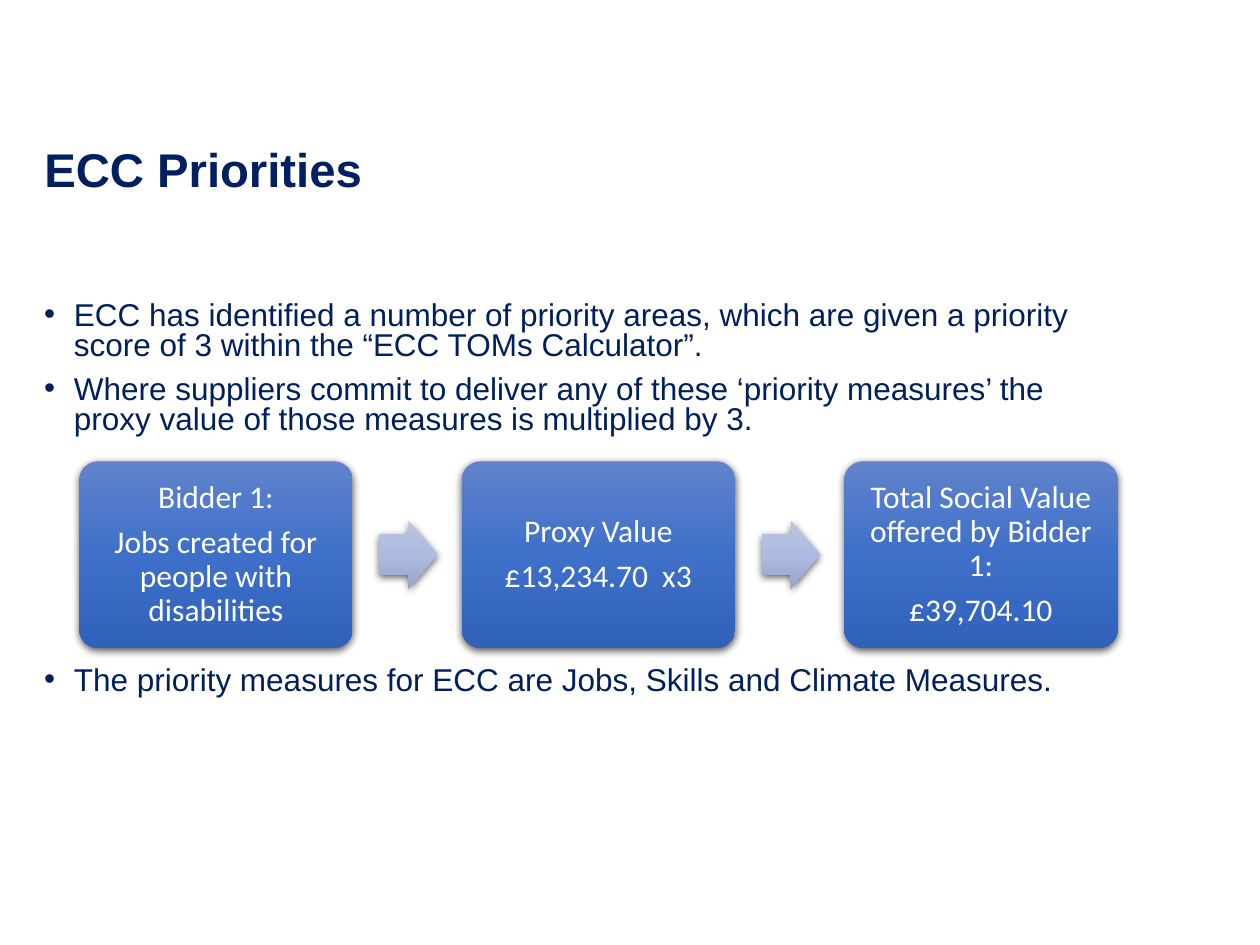
from copy import deepcopy

from lxml.etree import SubElement
from pptx import Presentation
from pptx.dml.color import RGBColor
from pptx.enum.shapes import MSO_SHAPE
from pptx.enum.text import MSO_ANCHOR, PP_ALIGN
from pptx.oxml.ns import qn
from pptx.util import Cm, Pt

TITLE = "ECC Priorities"
# Each bullet with its space before in points; the last leaves room for the flow
BULLETS = [
    ("ECC has identified a number of priority areas, which are given a priority "
     "score of 3 within the “ECC TOMs Calculator”.", 0),
    ("Where suppliers commit to deliver any of these ‘priority measures’ the "
     "proxy value of those measures is multiplied by 3.", 7.5),
    ("The priority measures for ECC are Jobs, Skills and Climate Measures.", 132),
]
STEPS = [
    ("Bidder 1:", "Jobs created for people with disabilities"),
    ("Proxy Value", "£13,234.70  x3"),
    ("Total Social Value offered by Bidder 1:", "£39,704.10"),
]

COLOURS = {"title": "002060", "bullet": "00205B", "step": "FFFFFF", "shadow": "000000"}
STEP_GRADIENT = ["6183CB", "3E70CA", "3062BB"]
ARROW_GRADIENT = ["BBC5E3", "AEBBE0", "98A4CB"]

STEP_LEFT, STEP_TOP, STEP_WIDTH, STEP_HEIGHT = 1.6, 9.3, 5.51, 3.76
STEP_PITCH = 7.71
ARROW_OFFSET, ARROW_WIDTH, ARROW_HEIGHT = 6.05, 1.17, 1.37


def set_all(target, values):
    for name, value in values.items():
        setattr(target, name, value)


def format_font(font, name, size, colour, bold=False):
    set_all(font, {"name": name, "size": Pt(size), "bold": bold})
    font.color.rgb = RGBColor.from_string(COLOURS[colour])


def add_bullet(paragraph):
    properties = paragraph._p.get_or_add_pPr()
    properties.set("marL", str(Cm(0.6)))
    properties.set("indent", str(-Cm(0.6)))
    SubElement(properties, qn("a:buFont"), typeface="Arial")
    SubElement(properties, qn("a:buChar"), char="•")


def fill_gradient(shape, colours):
    """Fill from top to bottom with three evenly spaced colours."""
    shape.fill.gradient()
    shape.fill.gradient_angle = 270
    first = shape._element.spPr.find(qn("a:gradFill")).find(qn("a:gsLst"))[0]
    first.addnext(deepcopy(first))
    for stop, colour, position in zip(shape.fill.gradient_stops, colours, (0, 0.5, 1)):
        stop.color.rgb = RGBColor.from_string(colour)
        stop.position = position


def add_shadow(shape):
    shape.shadow.inherit = False
    effects = shape._element.spPr.find(qn("a:effectLst"))
    shadow = SubElement(effects, qn("a:outerShdw"), blurRad=str(Pt(4.5)),
                        dist=str(Pt(1.5)), dir="5400000", algn="ctr", rotWithShape="0")
    colour = SubElement(shadow, qn("a:srgbClr"), val=COLOURS["shadow"])
    SubElement(colour, qn("a:alpha"), val="63000")


def add_flow_shape(slide, kind, box, adjustments, gradient):
    shape = slide.shapes.add_shape(kind, *(Cm(length) for length in box))
    for index, value in enumerate(adjustments):
        shape.adjustments[index] = value
    fill_gradient(shape, gradient)
    shape.line.fill.background()
    add_shadow(shape)
    return shape


def add_title(slide):
    title = slide.shapes.title
    set_all(title, {"left": Cm(0.64), "top": Cm(2.82), "width": Cm(24.08), "height": Cm(1.98)})
    frame = title.text_frame
    frame.text = TITLE
    set_all(frame, {"vertical_anchor": MSO_ANCHOR.TOP, "word_wrap": True})
    set_all(frame.paragraphs[0], {"alignment": PP_ALIGN.LEFT, "line_spacing": 0.9})
    format_font(frame.paragraphs[0].font, "Arial", 27, "title", bold=True)


def add_bullets(slide):
    frame = slide.shapes.add_textbox(Cm(0.64), Cm(5.97), Cm(21.89), Cm(9.78)).text_frame
    frame.word_wrap = True
    frame.text = "\n".join(text for text, _ in BULLETS)
    for paragraph, (_, gap) in zip(frame.paragraphs, BULLETS):
        add_bullet(paragraph)
        set_all(paragraph, {"line_spacing": 0.8, "space_before": Pt(gap)})
        format_font(paragraph.font, "Arial", 18, "bullet")


def add_step(slide, left, lines):
    step = add_flow_shape(slide, MSO_SHAPE.ROUNDED_RECTANGLE,
                          (left, STEP_TOP, STEP_WIDTH, STEP_HEIGHT), [0.1], STEP_GRADIENT)
    frame = step.text_frame
    frame.text = "\n".join(lines)
    set_all(frame, {"word_wrap": True, "vertical_anchor": MSO_ANCHOR.MIDDLE})
    for side in ("left", "top", "right", "bottom"):
        setattr(frame, f"margin_{side}", Cm(0.18))
    for paragraph in frame.paragraphs:
        set_all(paragraph, {"alignment": PP_ALIGN.CENTER, "line_spacing": 0.9,
                            "space_after": Pt(6.3)})
        format_font(paragraph.font, "Calibri", 18, "step")


def add_flow(slide):
    arrow_top = STEP_TOP + (STEP_HEIGHT - ARROW_HEIGHT) / 2
    for index, lines in enumerate(STEPS):
        left = STEP_LEFT + index * STEP_PITCH
        add_step(slide, left, lines)
        if index < len(STEPS) - 1:
            add_flow_shape(slide, MSO_SHAPE.RIGHT_ARROW,
                           (left + ARROW_OFFSET, arrow_top, ARROW_WIDTH, ARROW_HEIGHT),
                           [0.6, 0.5], ARROW_GRADIENT)


def main():
    deck = Presentation()
    set_all(deck, {"slide_width": Cm(25.4), "slide_height": Cm(19.05)})
    slide = deck.slides.add_slide(deck.slide_layouts[5])
    add_title(slide)
    add_bullets(slide)
    add_flow(slide)
    deck.save("out.pptx")


if __name__ == "__main__":
    main()
